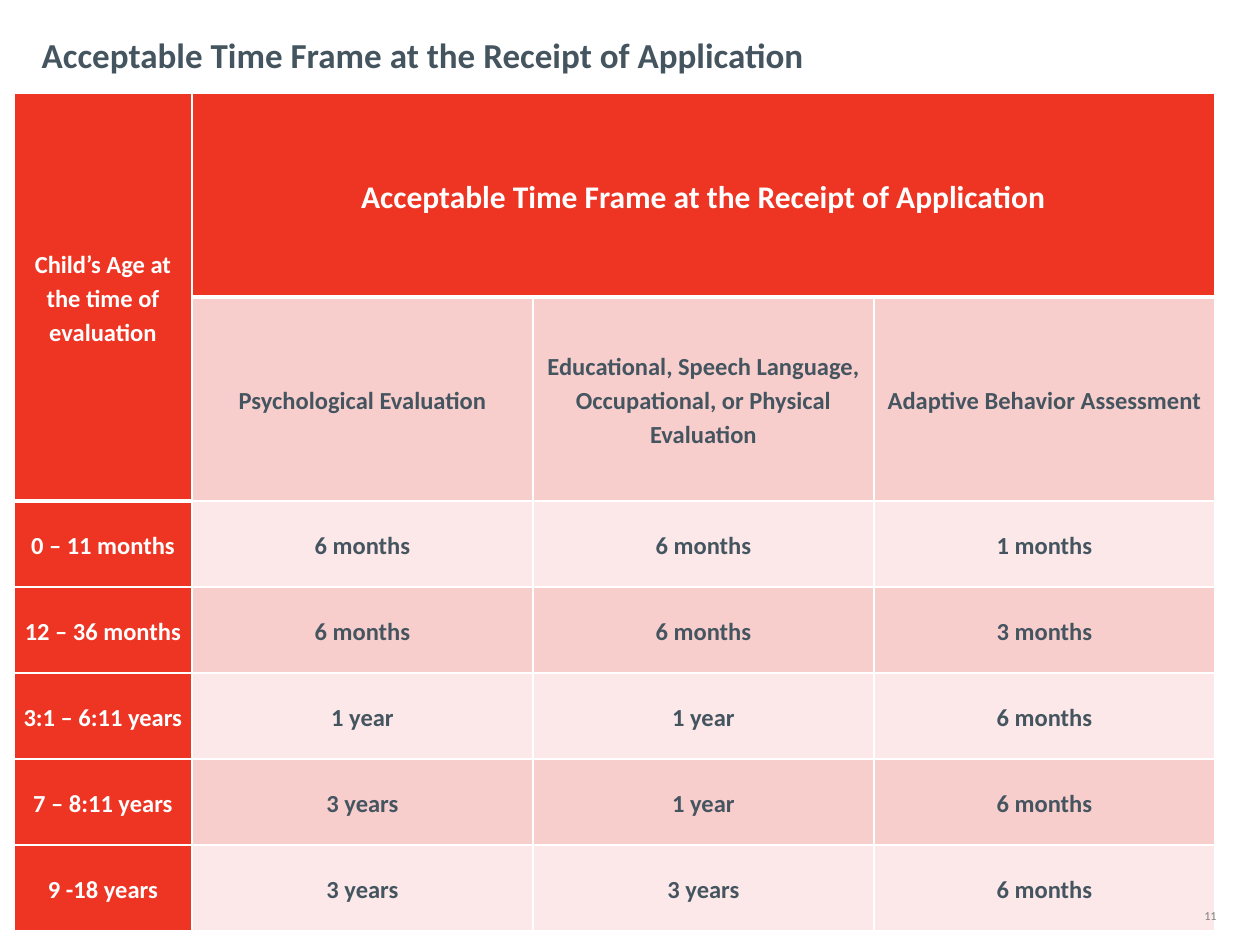
from lxml import etree
from pptx import Presentation
from pptx.dml.color import RGBColor
from pptx.enum.text import MSO_ANCHOR, PP_ALIGN
from pptx.oxml.ns import qn
from pptx.util import Emu, Pt

LEFT, CENTER, RIGHT = PP_ALIGN.LEFT, PP_ALIGN.CENTER, PP_ALIGN.RIGHT
MIDDLE = MSO_ANCHOR.MIDDLE
TITLE_ONLY = 5
FONT = "Calibri"
COLORS = {"red": "EE3524", "rose": "F8CECD", "blush": "FCE8E8",
          "slate": "455560", "gray": "808080", "white": "FFFFFF"}
HEADING = "Acceptable Time Frame at the Receipt of Application"
ROWS = [
    ["Child’s Age at the time of evaluation", HEADING, "", ""],
    ["", "Psychological Evaluation",
     "Educational, Speech Language, Occupational, or Physical Evaluation",
     "Adaptive Behavior Assessment"],
    ["0 – 11 months", "6 months", "6 months", "1 months"],
    ["12 – 36 months", "6 months", "6 months", "3 months"],
    ["3:1 – 6:11 years", "1 year", "1 year", "6 months"],
    ["7 – 8:11 years", "3 years", "1 year", "6 months"],
    ["9 -18 years", "3 years", "3 years", "6 months"],
]
COL_WIDTHS = [178, 341, 341, 341]
ROW_HEIGHTS = [204] * 2 + [86] * 5


def px(n):
    """Turn px at 126 to the inch into EMU."""
    return Emu(round(n * 914400 / 126))


def rgb(name):
    """Look up a named colour."""
    return RGBColor.from_string(COLORS[name])


def put_text(tf, text, size, color, bold=False, align=LEFT, spacing=None, gap=None):
    """Write one formatted paragraph into a text frame."""
    tf.word_wrap = True
    p = tf.paragraphs[0]
    p.alignment = align
    if spacing:
        p.line_spacing = spacing
    if gap is not None:
        p.space_before = p.space_after = Pt(gap)
    r = p.add_run()
    r.text = text
    r.font.name, r.font.size, r.font.bold = FONT, Pt(size), bold
    r.font.color.rgb = rgb(color)


def set_borders(cell, top, bottom):
    """Give a cell white borders, with top and bottom widths in points."""
    tc_pr = cell._tc.get_or_add_tcPr()
    for tag, width in (("lnL", 1), ("lnR", 1), ("lnT", top), ("lnB", bottom)):
        ln = etree.SubElement(tc_pr, qn(f"a:{tag}"), w=str(Pt(width)))
        fill = etree.SubElement(ln, qn("a:solidFill"))
        etree.SubElement(fill, qn("a:srgbClr"), val=COLORS["white"])


def rule_below(row, col):
    """Return the border width under a cell, thicker below the red headers."""
    return 3 if row == 0 or (row, col) == (1, 0) else 1


def add_title(s, x, y, w, h):
    """Place the slide title."""
    sp = s.shapes.title
    sp.left, sp.top, sp.width, sp.height = map(px, (x, y, w, h))
    sp.text_frame.vertical_anchor = MIDDLE
    put_text(sp.text_frame, HEADING, 20, "slate", bold=True)


def add_time_table(s, x, y, w, h):
    """Place the table of time frames by age."""
    table = s.shapes.add_table(len(ROWS), len(COL_WIDTHS), *map(px, (x, y, w, h))).table
    table.first_row = table.horz_banding = False
    for col, width in zip(table.columns, COL_WIDTHS):
        col.width = px(width)
    for row, height in zip(table.rows, ROW_HEIGHTS):
        row.height = px(height)
    table.cell(0, 0).merge(table.cell(1, 0))
    table.cell(0, 1).merge(table.cell(0, 3))
    for i, row in enumerate(ROWS):
        for j, text in enumerate(row):
            cell = table.cell(i, j)
            header = i == 0 or j == 0
            set_borders(cell, rule_below(i - 1, j) if i else 1, rule_below(i, j))
            cell.fill.solid()
            cell.fill.fore_color.rgb = rgb("red" if header else "rose" if i % 2 else "blush")
            cell.vertical_anchor = MIDDLE
            cell.margin_left = cell.margin_right = px(9)
            cell.margin_top = cell.margin_bottom = 0
            if text:
                put_text(cell.text_frame, text, 18 if text == HEADING else 14,
                         "white" if header else "slate", bold=True,
                         align=CENTER, spacing=1.15, gap=2)


def add_page_number(s, x, y, w, h):
    """Place the page number."""
    tf = s.shapes.add_textbox(*map(px, (x, y, w, h))).text_frame
    tf.margin_top = tf.margin_bottom = 0
    tf.vertical_anchor = MIDDLE
    put_text(tf, "11", 7, "gray", align=RIGHT)


def main():
    """Build and save the slide."""
    prs = Presentation()
    prs.slide_width, prs.slide_height = px(1260), px(945)
    s = prs.slides.add_slide(prs.slide_layouts[TITLE_ONLY])
    add_title(s, 29, 16, 941, 77)
    add_time_table(s, 14, 93, sum(COL_WIDTHS), sum(ROW_HEIGHTS))
    add_page_number(s, 935, 906, 294, 19)
    prs.save("out.pptx")


if __name__ == "__main__":
    main()
